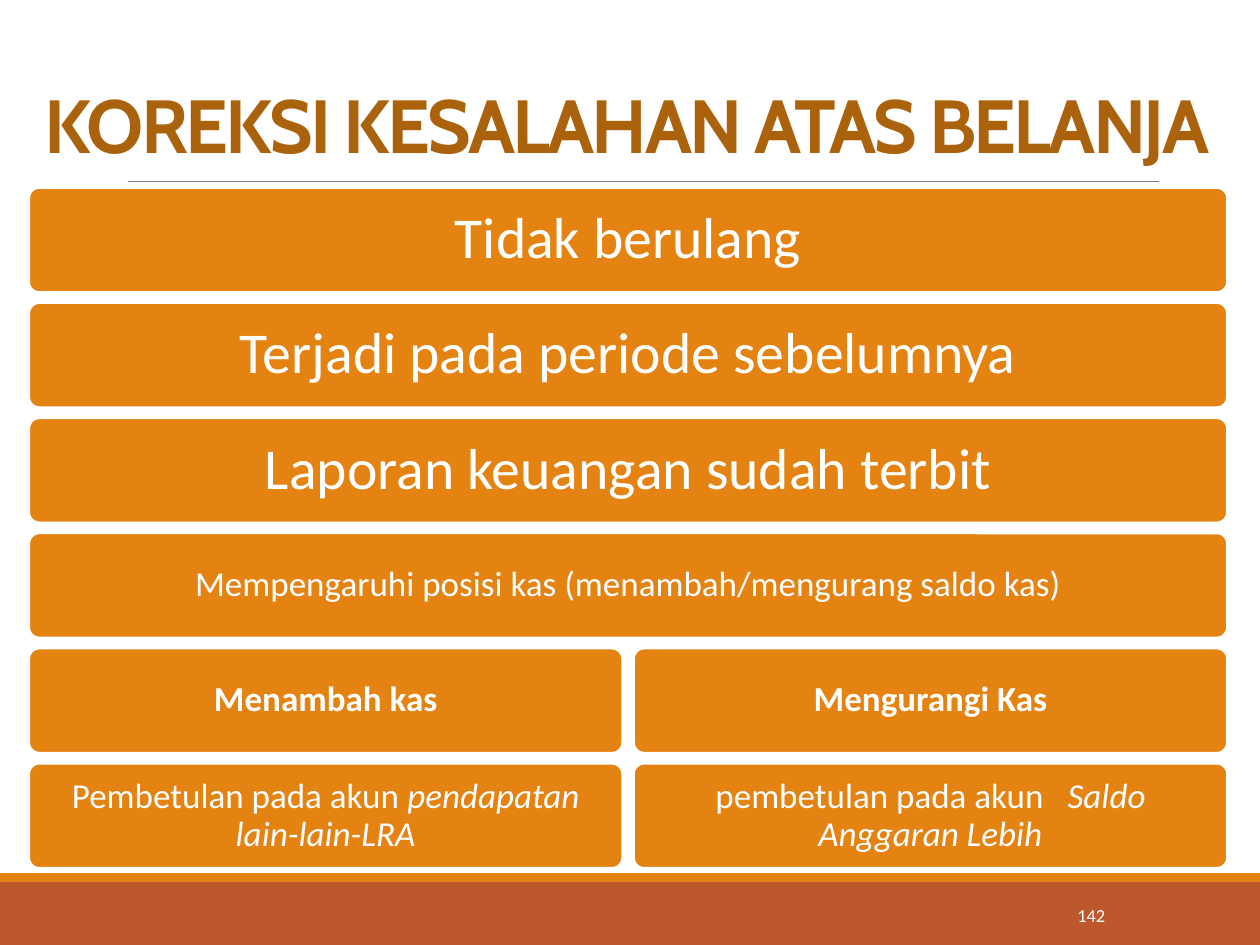
from collections import namedtuple

from lxml.etree import SubElement
from pptx import Presentation
from pptx.dml.color import RGBColor
from pptx.enum.shapes import MSO_CONNECTOR as Connector, MSO_SHAPE as Shape
from pptx.enum.text import MSO_ANCHOR as Anchor, MSO_AUTO_SIZE as AutoSize, PP_ALIGN as Align
from pptx.oxml.ns import qn
from pptx.util import Inches, Pt

Box = namedtuple("Box", "left top width height")

COLORS = {
    "orange": "E48312",
    "rust": "BD582C",
    "brown": "AB620D",
    "gray": "808080",
    "white": "FFFFFF",
}
LARGE = {"name": "Calibri", "size": Pt(33)}
SMALL = {"name": "Calibri", "size": Pt(20)}
BOLD = {**SMALL, "bold": True}
ITALIC = {**SMALL, "italic": True}

CRITERIA = [
    [[("Tidak berulang", LARGE)]],
    [[("Terjadi pada periode sebelumnya", LARGE)]],
    [[("Laporan keuangan sudah terbit", LARGE)]],
    [[("Mempengaruhi posisi kas (menambah/mengurang saldo kas)", SMALL)]],
    [[("Menambah kas", BOLD)], [("Mengurangi Kas", BOLD)]],
    [
        [("Pembetulan pada akun ", SMALL), ("pendapatan lain-lain-LRA", ITALIC)],
        [("pembetulan pada akun", SMALL), (" ", SMALL, 9), ("Saldo Anggaran Lebih", ITALIC)],
    ],
]


def rgb(name):
    return RGBColor.from_string(COLORS[name])


def place(shape, box):
    for side, value in box._asdict().items():
        setattr(shape, side, Inches(value))


def add_block(page, kind, box, color):
    block = page.shapes.add_shape(kind, *map(Inches, box))
    block.shadow.inherit = False
    block.fill.solid()
    block.fill.fore_color.rgb = rgb(color)
    block.line.fill.background()
    return block


def write(frame, spans, color, line_spacing=1.0, anchor=Anchor.MIDDLE):
    frame.word_wrap = True
    frame.auto_size = AutoSize.NONE
    frame.vertical_anchor = anchor
    para = frame.paragraphs[0]
    para.alignment = Align.CENTER
    para.line_spacing = line_spacing
    for text, formats, *tracking in spans:
        span = para.add_run()
        span.text = text
        span.font.color.rgb = rgb(color)
        for name, value in formats.items():
            setattr(span.font, name, value)
        for points in tracking:
            span.font._element.set("spc", str(int(points * 100)))


def add_footer(page, box):
    stripe = 0.07
    add_block(page, Shape.RECTANGLE, box._replace(top=box.top + stripe, height=box.height - stripe), "rust")
    add_block(page, Shape.RECTANGLE, box._replace(height=stripe), "orange")
    number = page.shapes.add_textbox(*map(Inches, (box.left + 8.12, box.top + 0.13, 1.08, 0.4)))
    write(number.text_frame, [("142", {"name": "Calibri", "size": Pt(10.5)})], "white")


def add_heading(page, box):
    title = page.shapes.title
    place(title, box)
    style = {"name": "Cabin", "size": Pt(43), "bold": True}
    write(title.text_frame, [("KOREKSI KESALAHAN ATAS BELANJA", style, -1.5)], "brown", 0.85, Anchor.BOTTOM)
    rule_top = Inches(box.top + box.height + 0.05)
    rule = page.shapes.add_connector(Connector.STRAIGHT, Inches(1.02), rule_top, Inches(9.2), rule_top)
    rule.line.color.rgb = rgb("gray")
    rule.line.width = Pt(0.5)
    SubElement(rule._element.spPr, qn("a:effectLst"))


def add_card(page, box, spans):
    card = add_block(page, Shape.ROUNDED_RECTANGLE, box, "orange")
    card.adjustments[0] = 0.1
    card.line.color.rgb = rgb("white")
    card.line.width = Pt(1.25)
    frame = card.text_frame
    for side in ("left", "top", "right", "bottom"):
        setattr(frame, f"margin_{side}", Inches(0.1))
    write(frame, spans, "white", 0.9)


def add_criteria(page, box, rows):
    card_height, column_gap = 0.83, 0.09
    step = (box.height - card_height) / (len(rows) - 1)
    for row, cards in enumerate(rows):
        width = (box.width - column_gap * (len(cards) - 1)) / len(cards)
        for column, spans in enumerate(cards):
            left = box.left + column * (width + column_gap)
            add_card(page, Box(left, box.top + row * step, width, card_height), spans)


def main():
    deck = Presentation()
    deck.slide_width, deck.slide_height = Inches(10), Inches(7.5)
    page = deck.slides.add_slide(deck.slide_layouts[5])
    add_footer(page, Box(0, 6.93, 10, 0.57))
    add_heading(page, Box(0.22, 0.09, 9.51, 1.3))
    add_criteria(page, Box(0.23, 1.49, 9.51, 5.4), CRITERIA)
    deck.save("out.pptx")


if __name__ == "__main__":
    main()
